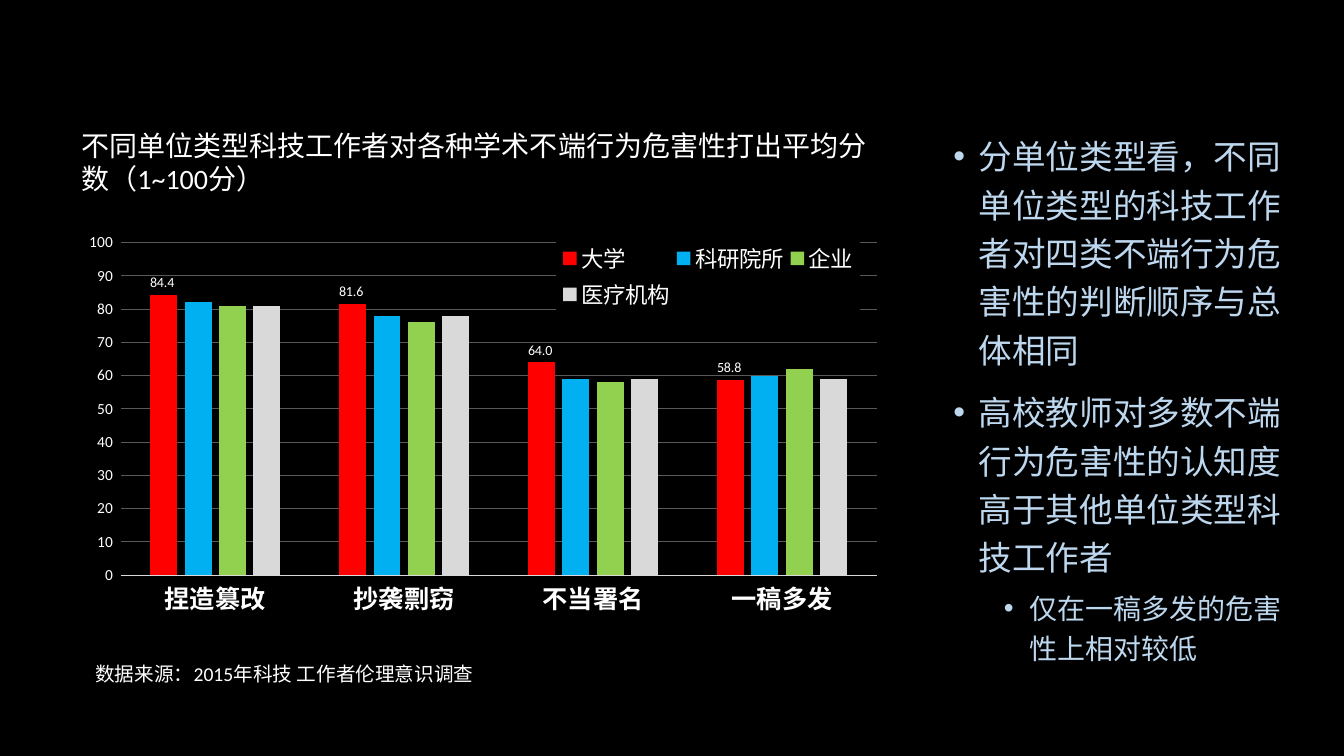
"""Build a slide charting how harmful four kinds of academic misconduct are judged."""
from lxml import etree
from pptx import Presentation
from pptx.chart.data import CategoryChartData
from pptx.dml.color import RGBColor
from pptx.enum.chart import XL_CHART_TYPE, XL_LABEL_POSITION, XL_LEGEND_POSITION, XL_TICK_MARK
from pptx.oxml import parse_xml
from pptx.oxml.ns import nsdecls, qn
from pptx.util import Pt

BLACK = RGBColor(0x00, 0x00, 0x00)
WHITE = RGBColor(0xFF, 0xFF, 0xFF)
PALE = RGBColor(0xBD, 0xD7, 0xEE)
GRID = RGBColor(0x59, 0x59, 0x59)
RED = RGBColor(0xFF, 0x00, 0x00)
BLUE = RGBColor(0x00, 0xB0, 0xF0)
GREEN = RGBColor(0x92, 0xD0, 0x50)
GREY = RGBColor(0xD9, 0xD9, 0xD9)


def style(font, size, color, name="Calibri"):
    font.size = Pt(size)
    font.color.rgb = color
    font.name = name


def layout(parent, index, inner, **box):
    for old in parent.findall(qn("c:layout")):
        parent.remove(old)
    node = parse_xml(f"<c:layout {nsdecls('c')}><c:manualLayout/></c:layout>")
    tags = {"layoutTarget": "inner"} if inner else {}
    tags |= {"xMode": "edge", "yMode": "edge"} | box
    for tag, val in tags.items():
        etree.SubElement(node[0], qn(f"c:{tag}")).set("val", str(val))
    parent.insert(index, node)


deck = Presentation()
deck.slide_width, deck.slide_height = Pt(960), Pt(540)
slide = deck.slides.add_slide(deck.slide_layouts[6])
slide.background.fill.solid()
slide.background.fill.fore_color.rgb = BLACK

series = [
    ("大学", (84.4, 81.6, 64, 58.8), RED),
    ("科研院所", (82, 78, 59, 60), BLUE),
    ("企业", (81, 76, 58, 62), GREEN),
    ("医疗机构", (81, 78, 59, 59), GREY),
]
data = CategoryChartData()
data.categories = ["捏造篡改", "抄袭剽窃", "不当署名", "一稿多发"]
for name, scores, color in series:
    data.add_series(name, scores)
frame = slide.shapes.add_chart(
    XL_CHART_TYPE.COLUMN_CLUSTERED, Pt(51), Pt(160.5), Pt(587), Pt(321), data)
chart = frame.chart
chart.has_title = False
style(chart.font, 10, WHITE)
plot = chart.plots[0]
plot.gap_width, plot.overlap = 219, -27
plot.vary_by_categories = False
for bars, (name, scores, color) in zip(plot.series, series):
    bars.format.fill.solid()
    bars.format.fill.fore_color.rgb = color

labels = plot.series[0].data_labels
labels.show_value = True
labels.position = XL_LABEL_POSITION.OUTSIDE_END
labels.number_format, labels.number_format_is_linked = "0.0_ ", False
style(labels.font, 10, WHITE)

cats, vals = chart.category_axis, chart.value_axis
for axis in (cats, vals):
    axis.major_tick_mark = axis.minor_tick_mark = XL_TICK_MARK.NONE
style(cats.tick_labels.font, 18, WHITE, "Noto Sans CJK SC")
cats.tick_labels.font.bold = True
cats.format.line.color.rgb = GREY
cats.format.line.width = Pt(0.75)
style(vals.tick_labels.font, 11, WHITE)
vals.tick_labels.number_format = "0_ "
vals.tick_labels.number_format_is_linked = False
vals.minimum_scale, vals.maximum_scale, vals.major_unit = 0, 100, 10
vals.format.line.fill.background()
vals.major_gridlines.format.line.color.rgb = GRID
vals.major_gridlines.format.line.width = Pt(0.75)

chart.has_legend = True
legend = chart.legend
legend.position = XL_LEGEND_POSITION.BOTTOM
legend.include_in_layout = False
style(legend.font, 16, WHITE)
key = legend.font and chart.element.find(".//" + qn("c:legend"))
layout(key, 1, False, x=0.59, y=0.03, w=0.37, h=0.17)
fill = parse_xml(
    f"<c:spPr {nsdecls('c', 'a')}><a:solidFill><a:srgbClr val='{BLACK}'/></a:solidFill></c:spPr>")
key.find(qn("c:overlay")).addnext(fill)
layout(chart.element.find(".//" + qn("c:plotArea")), 0, True, x=0.06, y=0.04, w=0.92, h=0.74)

notes = [
    (51, 88, 587, 55, 20, "不同单位类型科技工作者对各种学术不端行为危害性打出平均分数（1~100分）"),
    (61, 469.5, 577, 24.5, 14, "数据来源：2015年科技 工作者伦理意识调查"),
]
for left, top, width, height, size, text in notes:
    box = slide.shapes.add_textbox(Pt(left), Pt(top), Pt(width), Pt(height))
    box.text_frame.word_wrap = True
    box.text_frame.text = text
    style(box.text_frame.paragraphs[0].runs[0].font, size, WHITE)

points = [
    (0, 24, 18, 10, "分单位类型看，不同单位类型的科技工作者对四类不端行为危害性的判断顺序与总体相同"),
    (0, 24, 18, 10, "高校教师对多数不端行为危害性的认知度高于其他单位类型科技工作者"),
    (1, 20, 54, 5, "仅在一稿多发的危害性上相对较低"),
]
body = slide.shapes.add_textbox(Pt(674), Pt(88), Pt(258), Pt(364)).text_frame
body.word_wrap = True
body.text = "\n".join(point[-1] for point in points)
for para, (level, size, indent, space, text) in zip(body.paragraphs, points):
    para.level = level
    para.line_spacing = 1.2
    para.space_before = Pt(space)
    style(para.runs[0].font, size, PALE)
    props = para._p.get_or_add_pPr()
    props.set("marL", str(Pt(indent)))
    props.set("indent", str(Pt(-18)))
    etree.SubElement(props, qn("a:buFont")).set("typeface", "Arial")
    etree.SubElement(props, qn("a:buChar")).set("char", "•")

deck.save("out.pptx")
